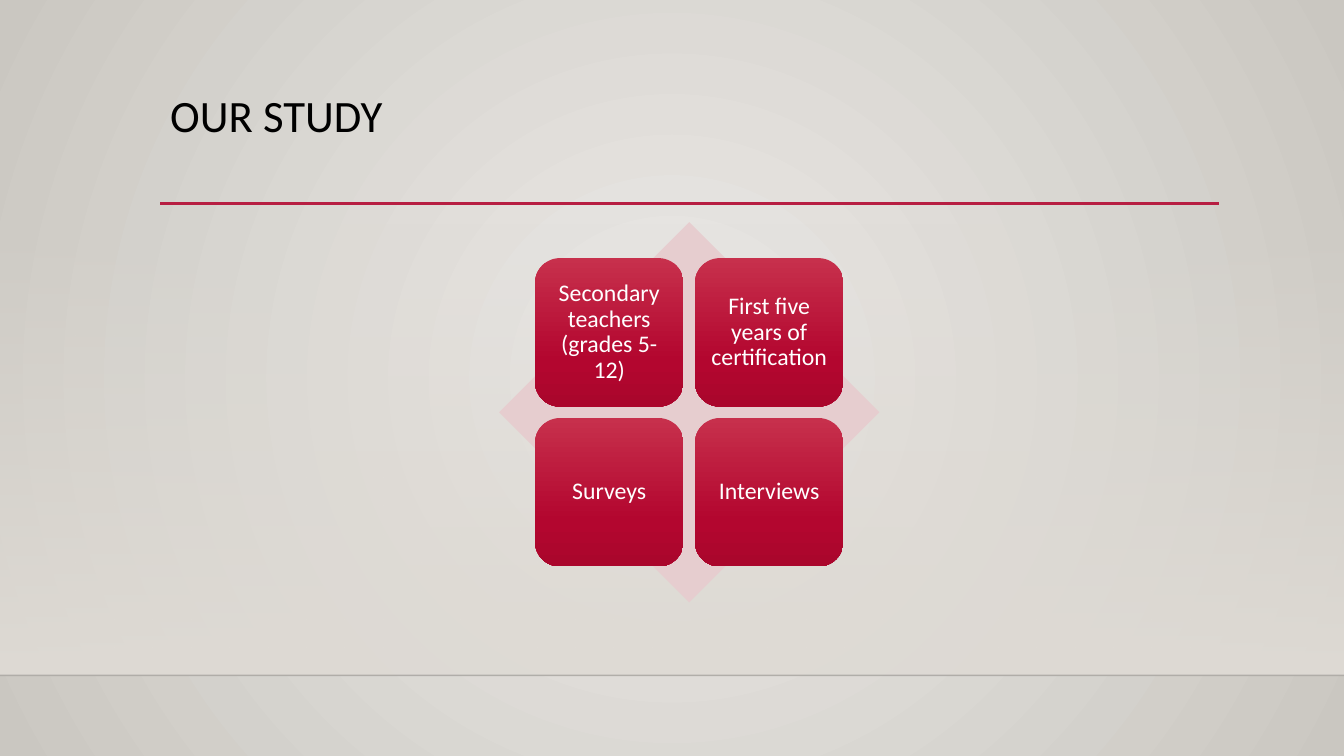
from dataclasses import dataclass

from lxml import etree
from pptx import Presentation
from pptx.dml.color import RGBColor
from pptx.enum.shapes import MSO_CONNECTOR, MSO_SHAPE
from pptx.enum.text import MSO_ANCHOR, PP_ALIGN
from pptx.oxml.ns import qn
from pptx.util import Cm, Pt

RECT = MSO_SHAPE.RECTANGLE
ROUND = MSO_SHAPE.ROUNDED_RECTANGLE
DIAMOND = MSO_SHAPE.DIAMOND
STRAIGHT = MSO_CONNECTOR.STRAIGHT
TOP, MIDDLE = MSO_ANCHOR.TOP, MSO_ANCHOR.MIDDLE
LEFT, CENTER = PP_ALIGN.LEFT, PP_ALIGN.CENTER


@dataclass(frozen=True)
class Theme:
    font: str = "Calibri"
    title: int = 32
    label: int = 17
    black: str = "000000"
    white: str = "FFFFFF"
    accent: str = "B71E42"
    pale: str = "E6CDCF"
    back: tuple = ((0, "ECEAE7", 100), (100, "CAC7C1", 100))
    wall: tuple = ((0, "DFDBD5", 0), (100, "DFDBD5", 100))
    tile: tuple = ((0, "C7304C", 100), (69, "B3062F", 100), (100, "AA062C", 100))


def tint(color, alpha):
    etree.SubElement(color, qn("a:alpha"), val=str(alpha * 1000))


def blend(fill, host, stops, radial=False):
    fill.gradient()
    grad = host.find(".//" + qn("a:gradFill"))
    for child in list(grad):
        grad.remove(child)
    group = etree.SubElement(grad, qn("a:gsLst"))
    for place, color, alpha in stops:
        stop = etree.SubElement(group, qn("a:gs"), pos=str(place * 1000))
        tone = etree.SubElement(stop, qn("a:srgbClr"), val=color)
        if alpha < 100:
            tint(tone, alpha)
    if radial:
        shade = etree.SubElement(grad, qn("a:path"), path="circle")
        sides = dict.fromkeys("ltrb", "50000")
        etree.SubElement(shade, qn("a:fillToRect"), **sides)
    else:
        etree.SubElement(grad, qn("a:lin"), ang="5400000", scaled="0")


def write(shape, text, font, size, color, align=LEFT, anchor=TOP, inset=(0.25, 0.13)):
    frame = shape.text_frame
    frame.word_wrap = True
    frame.vertical_anchor = anchor
    frame.margin_left = frame.margin_right = Cm(inset[0])
    frame.margin_top = frame.margin_bottom = Cm(inset[1])
    para = frame.paragraphs[0]
    para.alignment = align
    para.line_spacing = 0.9
    run = para.add_run()
    run.text = text
    run.font.name = font
    run.font.size = Pt(size)
    run.font.color.rgb = RGBColor.from_string(color)


class Board:
    def __init__(self, deck, theme):
        self.theme = theme
        self.slide = deck.slides.add_slide(deck.slide_layouts[5])
        blend(self.slide.background.fill, self.slide._element, theme.back, radial=True)

    def title(self, text, left, top, width, height):
        box = self.slide.shapes.title
        box.left, box.top = Cm(left), Cm(top)
        box.width, box.height = Cm(width), Cm(height)
        write(box, text, self.theme.font, self.theme.title, self.theme.black)

    def shape(self, kind, left, top, width, height, fill):
        item = self.slide.shapes.add_shape(kind, Cm(left), Cm(top), Cm(width), Cm(height))
        item.shadow.inherit = False
        item.line.fill.background()
        if isinstance(fill, str):
            item.fill.solid()
            item.fill.fore_color.rgb = RGBColor.from_string(fill)
        else:
            blend(item.fill, item._element.spPr, fill)
        return item

    def tile(self, text, left, top, side):
        item = self.shape(ROUND, left, top, side, side, self.theme.tile)
        write(item, text, self.theme.font, self.theme.label, self.theme.white,
              align=CENTER, anchor=MIDDLE, inset=(0.17, 0.17))

    def rule(self, left, right, top, color, width, alpha=100):
        item = self.slide.shapes.add_connector(STRAIGHT, Cm(left), Cm(top), Cm(right), Cm(top))
        item.line.color.rgb = RGBColor.from_string(color)
        item.line.width = Pt(width)
        props = item._element.spPr
        if alpha < 100:
            tint(props.find(".//" + qn("a:srgbClr")), alpha)
        etree.SubElement(props, qn("a:effectLst"))


def main():
    wide, high = 33.87, 19.05
    deck = Presentation()
    deck.slide_width, deck.slide_height = Cm(wide), Cm(high)
    theme = Theme()
    board = Board(deck, theme)

    floor = 17.02
    board.shape(RECT, 0, 5.61, wide, floor - 5.61, theme.wall)
    board.rule(0, wide, floor, theme.black, 1, alpha=20)
    board.rule(4.04, 30.73, 5.13, theme.accent, 2.5)
    board.title("OUR STUDY", 4.04, 2.24, 26.67, 2.92)

    mid, row, span = 17.37, 10.39, 9.58
    board.shape(DIAMOND, mid - span / 2, row - span / 2, span, span, theme.pale)

    side, gap = 3.74, 0.29
    labels = (
        "Secondary teachers (grades 5-12)",
        "First five years of certification",
        "Surveys",
        "Interviews",
    )
    start = side + gap / 2
    for index, label in enumerate(labels):
        down, across = divmod(index, 2)
        board.tile(label, mid - start + across * (side + gap),
                   row - start + down * (side + gap), side)

    deck.save("out.pptx")


if __name__ == "__main__":
    main()
